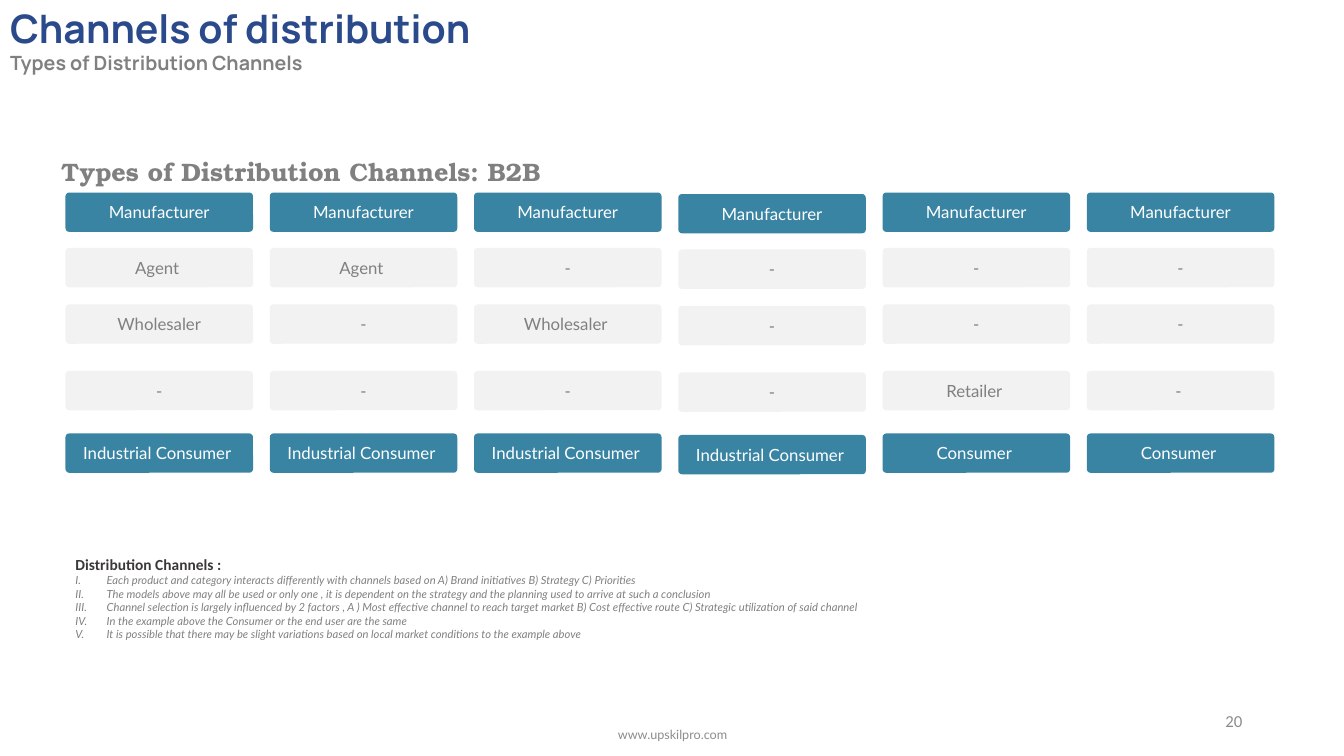
from dataclasses import dataclass
from typing import Any

from lxml import etree
from pptx import Presentation
from pptx.dml.color import RGBColor
from pptx.enum import shapes, text
from pptx.oxml import ns
from pptx.util import Inches, Pt

NAVY = RGBColor(0x2A, 0x4A, 0x8B)
TEAL = RGBColor(0x39, 0x84, 0xA3)
PALE = RGBColor(0xF2, 0xF2, 0xF2)
GRAY = RGBColor(0x80, 0x80, 0x80)
FOOTER_GRAY = RGBColor(0x8C, 0x8C, 0x8C)
CHARCOAL = RGBColor(0x3B, 0x38, 0x38)
WHITE = RGBColor(0xFF, 0xFF, 0xFF)

LEFT, TOP, CENTER, RIGHT = (text.PP_ALIGN.LEFT, text.MSO_ANCHOR.TOP,
                            text.PP_ALIGN.CENTER, text.PP_ALIGN.RIGHT)
MIDDLE = text.MSO_ANCHOR.MIDDLE


@dataclass(frozen=True)
class Style:
    name: str
    size: float
    color: RGBColor
    bold: bool = False
    italic: bool = False


@dataclass(frozen=True)
class Line:
    words: str
    style: Style
    numbered: bool = False


@dataclass(frozen=True)
class Box:
    left: float
    top: float
    width: float
    height: float


@dataclass(frozen=True)
class Caption:
    box: Box
    lines: list[Line]
    alignment: Any = LEFT
    anchor: Any = TOP


@dataclass(frozen=True)
class Channel:
    steps: tuple[str, ...]
    drop: float = 0


TITLE = Style("Manrope", 28, NAVY, bold=True)
SUBTITLE = Style("Manrope", 14, GRAY, bold=True)
HEADING = Style("TeX Gyre Bonum", 18, GRAY, bold=True)
END_STEP = Style("Lato", 12, WHITE)
MIDDLE_STEP = Style("Lato", 12, GRAY)
NOTES_HEADING = Style("Calibri", 11, CHARCOAL, bold=True)
NOTE = Style("Lato", 8, GRAY, italic=True)
PAGE_NUMBER = Style("Calibri", 12, FOOTER_GRAY)
WEB_ADDRESS = Style("Lato", 9, FOOTER_GRAY)

CHANNELS = [
    Channel(("Manufacturer", "Agent ", "Wholesaler", "-", "Industrial Consumer ")),
    Channel(("Manufacturer", "Agent ", "-", "-", "Industrial Consumer ")),
    Channel(("Manufacturer", "-", "Wholesaler ", "-", "Industrial Consumer ")),
    Channel(("Manufacturer", "-", "-", "-", "Industrial Consumer "), drop=0.015),
    Channel(("Manufacturer", "-", "-", "Retailer ", "Consumer ")),
    Channel(("Manufacturer", "-", "-", "- ", "Consumer ")),
]
STEP_TOPS = (1.91, 2.46, 3.02, 3.68, 4.3)
FIRST_LEFT, LAST_LEFT = 0.65, 10.78
PITCH = (LAST_LEFT - FIRST_LEFT) / (len(CHANNELS) - 1)

NOTES = [
    "Each product and category interacts differently with channels based on "
    "A) Brand initiatives B) Strategy C) Priorities",
    "The models above may all be used or only one , it is dependent on the strategy "
    "and the planning used to arrive at such a conclusion",
    "Channel selection is largely influenced by 2 factors , A ) Most effective channel to reach "
    "target market B) Cost effective route C) Strategic utilization of said channel",
    "In the example above the Consumer or the end user are the same",
    "It is possible that there may be slight variations based on local market conditions "
    "to the example above",
]

TITLE_CAPTION = Caption(Box(0, -0.01, 6.72, 0.81), [
    Line("Channels of distribution", TITLE),
    Line("Types of Distribution Channels", SUBTITLE)])
CAPTIONS = [
    Caption(Box(0.51, 1.5, 6.66, 0.4), [Line("Types of Distribution Channels: B2B", HEADING)]),
    Caption(Box(0.65, 5.46, 11, 0.96), [
        Line("Distribution Channels :", NOTES_HEADING),
        *(Line(note, NOTE, numbered=True) for note in NOTES)]),
    Caption(Box(9.42, 6.95, 3, 0.4), [Line("20", PAGE_NUMBER)], RIGHT, MIDDLE),
    Caption(Box(4.42, 7.09, 4.5, 0.4), [Line("www.upskilpro.com", WEB_ADDRESS)], CENTER, MIDDLE),
]


def apply(target: Any, values: dict[str, Any]) -> None:
    for name, value in values.items():
        setattr(target, name, value)


def place(box: Box) -> dict[str, int]:
    return {name: Inches(getattr(box, name)) for name in ("left", "top", "width", "height")}


def number_paragraph(paragraph: Any) -> None:
    """Give the paragraph a Roman numeral and a hanging indent."""
    properties = paragraph._p.get_or_add_pPr()
    properties.set("marL", str(Inches(0.31)))
    properties.set("indent", str(Inches(-0.31)))
    etree.SubElement(properties, ns.qn("a:buAutoNum"), type="romanUcPeriod")


def write(shape: Any, lines: list[Line], alignment: Any, anchor: Any) -> None:
    frame = shape.text_frame
    apply(frame, {"word_wrap": True, "auto_size": text.MSO_AUTO_SIZE.NONE,
                  "vertical_anchor": anchor})
    for index, line in enumerate(lines):
        paragraph = frame.add_paragraph() if index else frame.paragraphs[0]
        paragraph.alignment = alignment
        if line.numbered:
            number_paragraph(paragraph)
        run = paragraph.add_run()
        run.text = line.words
        style = line.style
        apply(run.font, {"name": style.name, "size": Pt(style.size),
                         "bold": style.bold, "italic": style.italic})
        run.font.color.rgb = style.color


def add_caption(slide: Any, caption: Caption) -> None:
    shape = slide.shapes.add_textbox(**place(caption.box))
    write(shape, caption.lines, caption.alignment, caption.anchor)


def add_step(slide: Any, words: str, box: Box, is_end: bool) -> None:
    shape = slide.shapes.add_shape(shapes.MSO_SHAPE.ROUNDED_RECTANGLE, **place(box))
    shape.adjustments[0] = 0.093
    shape.shadow.inherit = False
    shape.fill.solid()
    shape.fill.fore_color.rgb = TEAL if is_end else PALE
    shape.line.fill.background()
    if is_end:
        sides = ("left", "top", "right", "bottom")
        apply(shape.text_frame, {f"margin_{side}": 0 for side in sides})
    write(shape, [Line(words, END_STEP if is_end else MIDDLE_STEP)], CENTER, MIDDLE)


def main() -> None:
    presentation = Presentation()
    apply(presentation, {"slide_width": Inches(13.33), "slide_height": Inches(7.5)})
    slide = presentation.slides.add_slide(presentation.slide_layouts[5])

    title = slide.shapes.title
    apply(title, place(TITLE_CAPTION.box))
    write(title, TITLE_CAPTION.lines, TITLE_CAPTION.alignment, TITLE_CAPTION.anchor)

    for column, channel in enumerate(CHANNELS):
        left = FIRST_LEFT + column * PITCH
        for row, (words, top) in enumerate(zip(channel.steps, STEP_TOPS)):
            is_end = row in (0, len(STEP_TOPS) - 1)
            add_step(slide, words, Box(left, top + channel.drop, 1.86, 0.39), is_end)

    for caption in CAPTIONS:
        add_caption(slide, caption)
    presentation.save("out.pptx")


if __name__ == "__main__":
    main()
